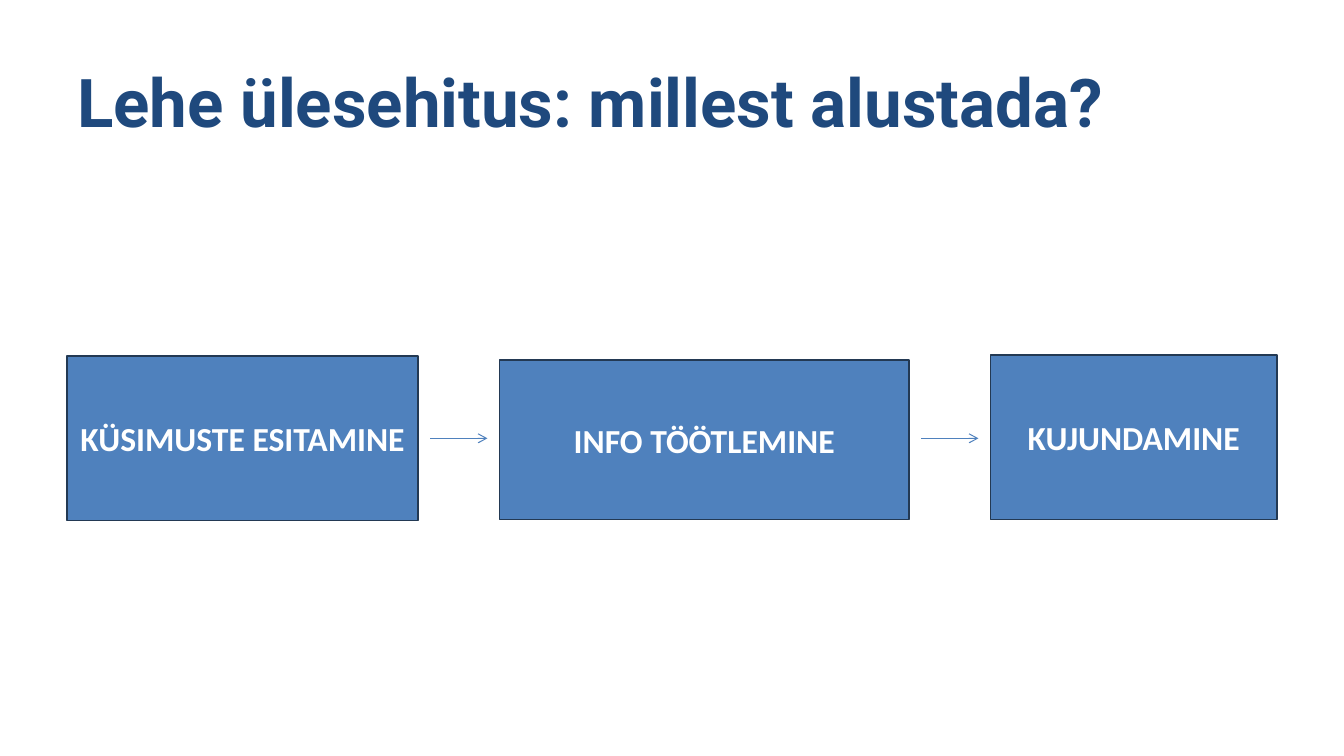
from lxml import etree
from pptx import Presentation
from pptx.dml.color import RGBColor
from pptx.enum.shapes import MSO_CONNECTOR as CONN, MSO_SHAPE as SHAPE
from pptx.enum.text import MSO_ANCHOR as ANCHOR, PP_ALIGN as ALIGN
from pptx.oxml.ns import qn
from pptx.util import Pt

NAVY = RGBColor(0x1F, 0x49, 0x7D)
BLUE = RGBColor(0x4F, 0x81, 0xBD)
EDGE = RGBColor(0x23, 0x39, 0x53)
WHITE = RGBColor(0xFF, 0xFF, 0xFF)

TITLE_FONT = {"name": "Roboto", "size": Pt(48), "bold": True}
STEP_FONT = {"name": "Calibri", "size": Pt(24), "bold": True}

# Label, width, top offset and height of each step, in points
STEPS = [
    ("KÜSIMUSTE ESITAMINE", 250.5, 0.8, 117.4),
    ("INFO TÖÖTLEMINE", 292.3, 3.6, 113.8),
    ("KUJUNDAMINE", 204.5, 0, 117.4),
]
GAP = 58.4
ARROW = 41


def write(tf, text, font, color, align):
    tf.word_wrap = True
    tf.vertical_anchor = ANCHOR.MIDDLE
    p = tf.paragraphs[0]
    p.alignment = align
    r = p.add_run()
    r.text = text
    for name, value in font.items():
        setattr(r.font, name, value)
    r.font.color.rgb = color


def add_title(slide, text, left, top, width, height):
    sp = slide.shapes.title
    sp.left, sp.top, sp.width, sp.height = map(Pt, (left, top, width, height))
    write(sp.text_frame, text, TITLE_FONT, NAVY, ALIGN.LEFT)


def add_step(slide, text, left, top, width, height):
    sp = slide.shapes.add_shape(SHAPE.RECTANGLE, *map(Pt, (left, top, width, height)))
    sp.shadow.inherit = False
    sp.fill.solid()
    sp.fill.fore_color.rgb = BLUE
    sp.line.color.rgb = EDGE
    sp.line.width = Pt(1)
    write(sp.text_frame, text, STEP_FONT, WHITE, ALIGN.CENTER)


def add_arrow(slide, left, y, length):
    cxn = slide.shapes.add_connector(CONN.STRAIGHT, Pt(left), Pt(y), Pt(left + length), Pt(y))
    cxn.line.color.rgb = BLUE
    cxn.line.width = Pt(0.75)
    etree.SubElement(cxn.line._get_or_add_ln(), qn("a:tailEnd"), type="arrow")
    etree.SubElement(cxn._element.spPr, qn("a:effectLst"))


def add_flow(slide, left, top, height):
    x = left
    for i, (text, width, offset, step_height) in enumerate(STEPS):
        # Arrow centred in the gap before each step but the first
        if i:
            add_arrow(slide, x - (GAP + ARROW) / 2, top + height / 2, ARROW)
        add_step(slide, text, x, top + offset, width, step_height)
        x += width + GAP


def main():
    prs = Presentation()
    prs.slide_width, prs.slide_height = Pt(960), Pt(540)
    slide = prs.slides.add_slide(prs.slide_layouts[5])
    slide.background.fill.solid()
    slide.background.fill.fore_color.rgb = WHITE

    # Title
    add_title(slide, "Lehe ülesehitus: millest alustada?", 48, 27, 864, 90)
    # Process steps
    add_flow(slide, 48, 253.6, 119)

    prs.save("out.pptx")


if __name__ == "__main__":
    main()
